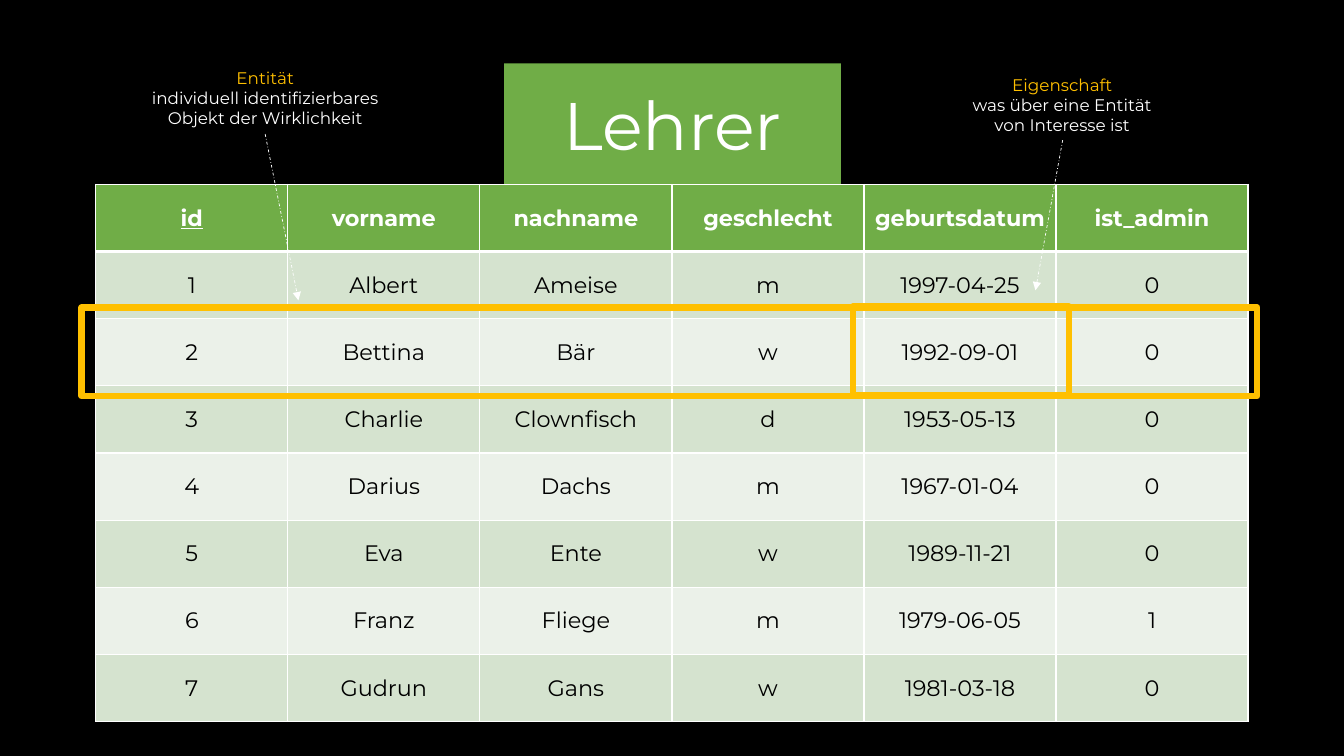
from lxml.etree import SubElement
from pptx import Presentation
from pptx.dml.color import RGBColor
from pptx.enum.dml import MSO_LINE
from pptx.enum.shapes import MSO_CONNECTOR, MSO_SHAPE
from pptx.enum.text import MSO_ANCHOR, MSO_AUTO_SIZE, PP_ALIGN
from pptx.oxml.ns import qn
from pptx.util import Inches, Pt

BLACK = RGBColor(0x00, 0x00, 0x00)
WHITE = RGBColor(0xFF, 0xFF, 0xFF)
GREEN = RGBColor(0x70, 0xAD, 0x47)
BAND_DARK = RGBColor(0xD5, 0xE3, 0xCF)
BAND_LIGHT = RGBColor(0xEB, 0xF1, 0xE9)
AMBER = RGBColor(0xFF, 0xC0, 0x00)

TEACHERS = [
    ("id", "vorname", "nachname", "geschlecht", "geburtsdatum", "ist_admin"),
    ("1", "Albert", "Ameise", "m", "1997-04-25", "0"),
    ("2", "Bettina", "Bär", "w", "1992-09-01", "0"),
    ("3", "Charlie", "Clownfisch", "d", "1953-05-13", "0"),
    ("4", "Darius", "Dachs", "m", "1967-01-04", "0"),
    ("5", "Eva", "Ente", "w", "1989-11-21", "0"),
    ("6", "Franz", "Fliege", "m", "1979-06-05", "1"),
    ("7", "Gudrun", "Gans", "w", "1981-03-18", "0"),
]


def add_centred_run(paragraph, text, size, color):
    paragraph.alignment = PP_ALIGN.CENTER
    run = paragraph.add_run()
    run.text = text
    run.font.name = "Montserrat"
    run.font.size = Pt(size)
    run.font.color.rgb = color
    return run


def add_cell_borders(cell, widths):
    """Draw white borders; widths maps a side (L, R, T, B) to points."""
    properties = cell._tc.get_or_add_tcPr()
    for side, width in widths.items():
        border = SubElement(properties, qn(f"a:ln{side}"), w=str(Pt(width)))
        fill = SubElement(border, qn("a:solidFill"))
        SubElement(fill, qn("a:srgbClr"), val=str(WHITE))


prs = Presentation()
prs.slide_width = Inches(13.33)
prs.slide_height = Inches(7.5)
slide = prs.slides.add_slide(prs.slide_layouts[5])
slide.background.fill.solid()
slide.background.fill.fore_color.rgb = BLACK

# Table name
entity_name = slide.shapes.title
entity_name.left, entity_name.top = Inches(5), Inches(0.63)
entity_name.width, entity_name.height = Inches(3.34), Inches(1.2)
entity_name.fill.solid()
entity_name.fill.fore_color.rgb = GREEN
entity_name.text_frame.auto_size = MSO_AUTO_SIZE.NONE
entity_name.text_frame.vertical_anchor = MSO_ANCHOR.MIDDLE
add_centred_run(entity_name.text_frame.paragraphs[0], "Lehrer", 48, WHITE)

# Teachers
teacher_table = slide.shapes.add_table(
    len(TEACHERS), len(TEACHERS[0]),
    Inches(0.95), Inches(1.83), Inches(11.43), Inches(5.33)).table
teacher_table.horz_banding = False
for row, teacher in enumerate(TEACHERS):
    is_header = row == 0
    for column, value in enumerate(teacher):
        cell = teacher_table.cell(row, column)
        add_cell_borders(cell, {"L": 1, "R": 1,
                                "T": 3 if row == 1 else 1,
                                "B": 3 if is_header else 1})
        cell.fill.solid()
        cell.fill.fore_color.rgb = (
            GREEN if is_header else BAND_DARK if row % 2 else BAND_LIGHT)
        cell.vertical_anchor = MSO_ANCHOR.MIDDLE
        run = add_centred_run(cell.text_frame.paragraphs[0], value, 16,
                              WHITE if is_header else BLACK)
        run.font.bold = is_header
        run.font.underline = value == "id"

# Each term: explanation, its box, arrow start and end, highlight frame
terms = [
    ("Entität", "individuell identifizierbares Objekt der Wirklichkeit",
     (1.12, 0.62, 3.02, 0.71), (2.63, 1.33, 2.96, 2.98),
     (0.81, 3.05, 11.66, 0.88)),
    ("Eigenschaft", "was über eine Entität von Interesse ist",
     (9.39, 0.69, 2.29, 0.71), (10.54, 1.39, 10.27, 2.88),
     (8.46, 3.04, 2.14, 0.88)),
]
for term, explanation, note_box, arrow_ends, frame_box in terms:
    arrow = slide.shapes.add_connector(
        MSO_CONNECTOR.STRAIGHT, *map(Inches, arrow_ends))
    arrow.line.color.rgb = WHITE
    arrow.line.width = Pt(0.5)
    arrow.line.dash_style = MSO_LINE.DASH_DOT
    SubElement(arrow.line._get_or_add_ln(), qn("a:tailEnd"), type="triangle")
    SubElement(arrow._element.spPr, qn("a:effectLst"))

    note = slide.shapes.add_textbox(*map(Inches, note_box)).text_frame
    note.word_wrap = True
    note.auto_size = MSO_AUTO_SIZE.SHAPE_TO_FIT_TEXT
    add_centred_run(note.paragraphs[0], term, 12, AMBER)
    add_centred_run(note.add_paragraph(), explanation, 12, WHITE)

    frame = slide.shapes.add_shape(
        MSO_SHAPE.RECTANGLE, *map(Inches, frame_box))
    frame.shadow.inherit = False
    frame.fill.background()
    frame.line.color.rgb = AMBER
    frame.line.width = Pt(4.5)

prs.save("out.pptx")
